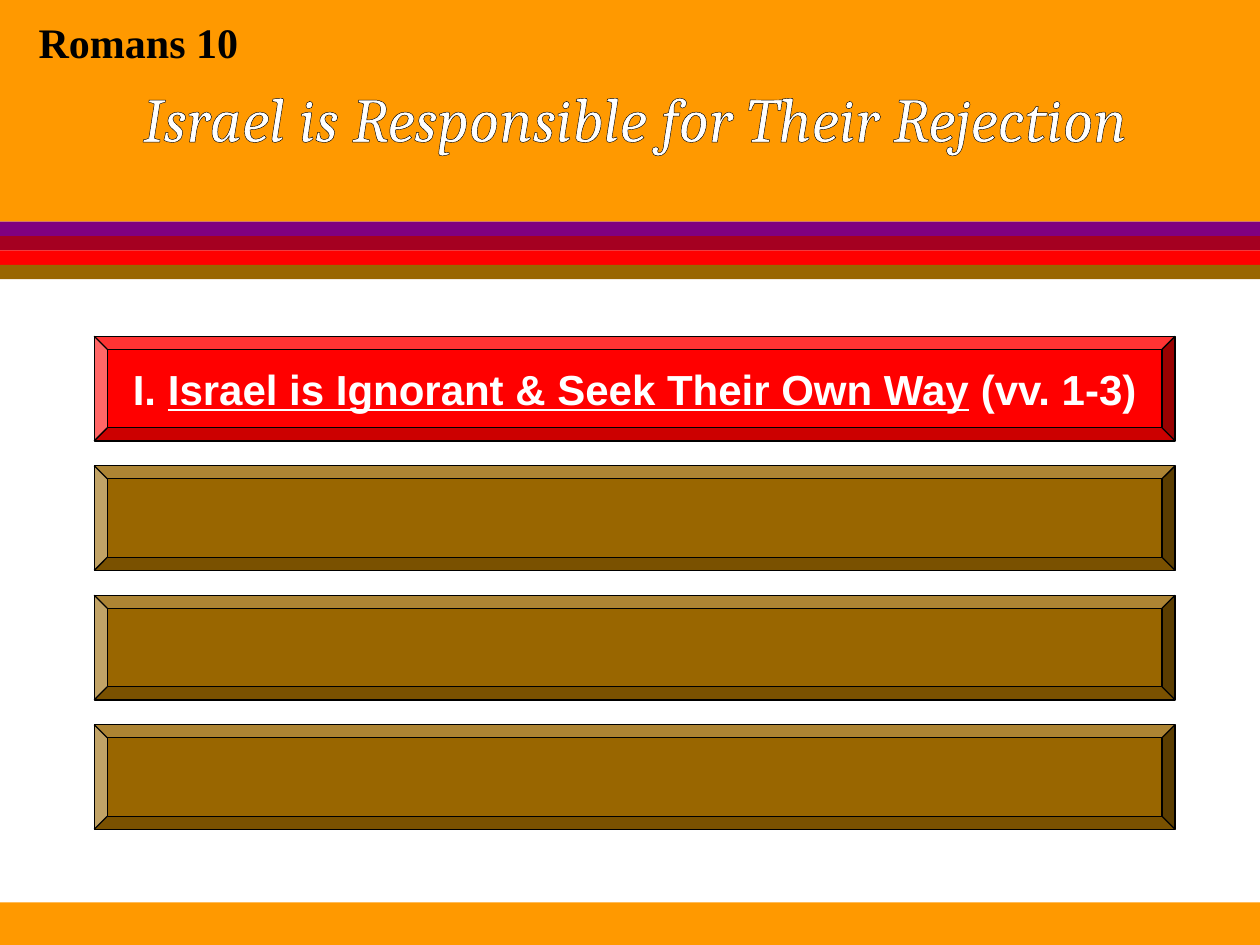
from lxml.etree import SubElement
from pptx import Presentation
from pptx.dml.color import RGBColor
from pptx.enum.shapes import MSO_SHAPE
from pptx.enum.text import MSO_ANCHOR, PP_ALIGN
from pptx.oxml.ns import qn
from pptx.util import Cm, Pt

BLACK = RGBColor(0x00, 0x00, 0x00)
WHITE = RGBColor(0xFF, 0xFF, 0xFF)
GRAY = RGBColor(0x96, 0x96, 0x96)
ORANGE = RGBColor(0xFF, 0x99, 0x00)
PURPLE = RGBColor(0x80, 0x00, 0x80)
CRIMSON = RGBColor(0xA5, 0x00, 0x21)
RED = RGBColor(0xFF, 0x00, 0x00)
BROWN = RGBColor(0x99, 0x66, 0x00)

WIDTH, HEIGHT = 25.4, 19.05
HEADER_HEIGHT = 4.47
STRIPE_HEIGHT = 0.29
FOOTER_TOP = 18.19
BUTTON_TOP, BUTTON_PITCH = 6.78, 2.61


class SlideBuilder:
    heading_font = "Times New Roman"
    title_font = "Cambria"
    button_font = "Arial"
    line_width = Pt(0.75)

    def __init__(self, slide):
        self.slide = slide

    def background(self, color):
        fill = self.slide.background.fill
        fill.solid()
        fill.fore_color.rgb = color

    def shape(self, kind, left, top, width, height, color):
        shape = self.slide.shapes.add_shape(
            kind, Cm(left), Cm(top), Cm(width), Cm(height))
        shape.shadow.inherit = False
        shape.fill.solid()
        shape.fill.fore_color.rgb = color
        return shape

    def band(self, top, height, color):
        """Draw a plain band across the whole slide."""
        shape = self.shape(MSO_SHAPE.RECTANGLE, 0, top, WIDTH, height, color)
        shape.line.fill.background()

    def button(self, top, color, parts=()):
        """Draw a bevelled button; parts are pairs of text and underline."""
        shape = self.shape(MSO_SHAPE.BEVEL, 1.9, top, 21.79, 2.11, color)
        shape.adjustments[0] = 0.125
        shape.line.color.rgb = BLACK
        shape.line.width = self.line_width
        text_frame = shape.text_frame
        text_frame.word_wrap = False
        text_frame.vertical_anchor = MSO_ANCHOR.MIDDLE
        paragraph = text_frame.paragraphs[0]
        paragraph.alignment = PP_ALIGN.CENTER
        for text, underline in parts:
            run = paragraph.add_run()
            run.text = text
            self.format_run(run, self.button_font, 24, WHITE, bold=True)
            run.font.underline = underline

    def text(self, left, top, width, height, text, alignment=PP_ALIGN.LEFT):
        """Add a line of text and return its run for formatting."""
        box = self.slide.shapes.add_textbox(
            Cm(left), Cm(top), Cm(width), Cm(height))
        box.text_frame.word_wrap = False
        box.text_frame.text = text
        paragraph = box.text_frame.paragraphs[0]
        paragraph.alignment = alignment
        return paragraph.runs[0]

    def heading(self, text):
        run = self.text(0.53, 0.2, 4.55, 1.27, text)
        self.format_run(run, self.heading_font, 24, BLACK, bold=True)

    def title(self, text):
        run = self.text(2.54, 1.47, 20.52, 2.54, text, PP_ALIGN.CENTER)
        self.format_run(run, self.title_font, 36, WHITE, italic=True)
        self.outline(run, BLACK)

    def format_run(self, run, font_name, size, color, bold=False, italic=False):
        font = run.font
        font.name = font_name
        font.size = Pt(size)
        font.bold = bold
        font.italic = italic
        font.color.rgb = color

    def outline(self, run, color):
        properties = run._r.get_or_add_rPr()
        line = SubElement(properties, qn("a:ln"), w=str(int(self.line_width)))
        fill = SubElement(line, qn("a:solidFill"))
        SubElement(fill, qn("a:srgbClr"), val=str(color))
        properties.insert(0, line)


def main():
    presentation = Presentation()
    presentation.slide_width = Cm(WIDTH)
    presentation.slide_height = Cm(HEIGHT)
    slide = presentation.slides.add_slide(presentation.slide_layouts[6])
    builder = SlideBuilder(slide)

    builder.background(GRAY)
    builder.band(3.81, HEIGHT - 3.81, WHITE)
    builder.band(FOOTER_TOP, HEIGHT - FOOTER_TOP, ORANGE)
    builder.band(0, HEADER_HEIGHT, ORANGE)
    for index, color in enumerate((PURPLE, CRIMSON, RED, BROWN)):
        builder.band(HEADER_HEIGHT + index * STRIPE_HEIGHT, STRIPE_HEIGHT, color)

    builder.heading("Romans 10")
    builder.title("Israel is Responsible for Their Rejection")

    builder.button(BUTTON_TOP, RED, (
        ("I. ", False),
        ("Israel is Ignorant & Seek Their Own Way", True),
        (" (vv. 1-3)", False),
    ))
    for index in range(1, 4):
        builder.button(BUTTON_TOP + index * BUTTON_PITCH, BROWN)

    presentation.save("out.pptx")


if __name__ == "__main__":
    main()
